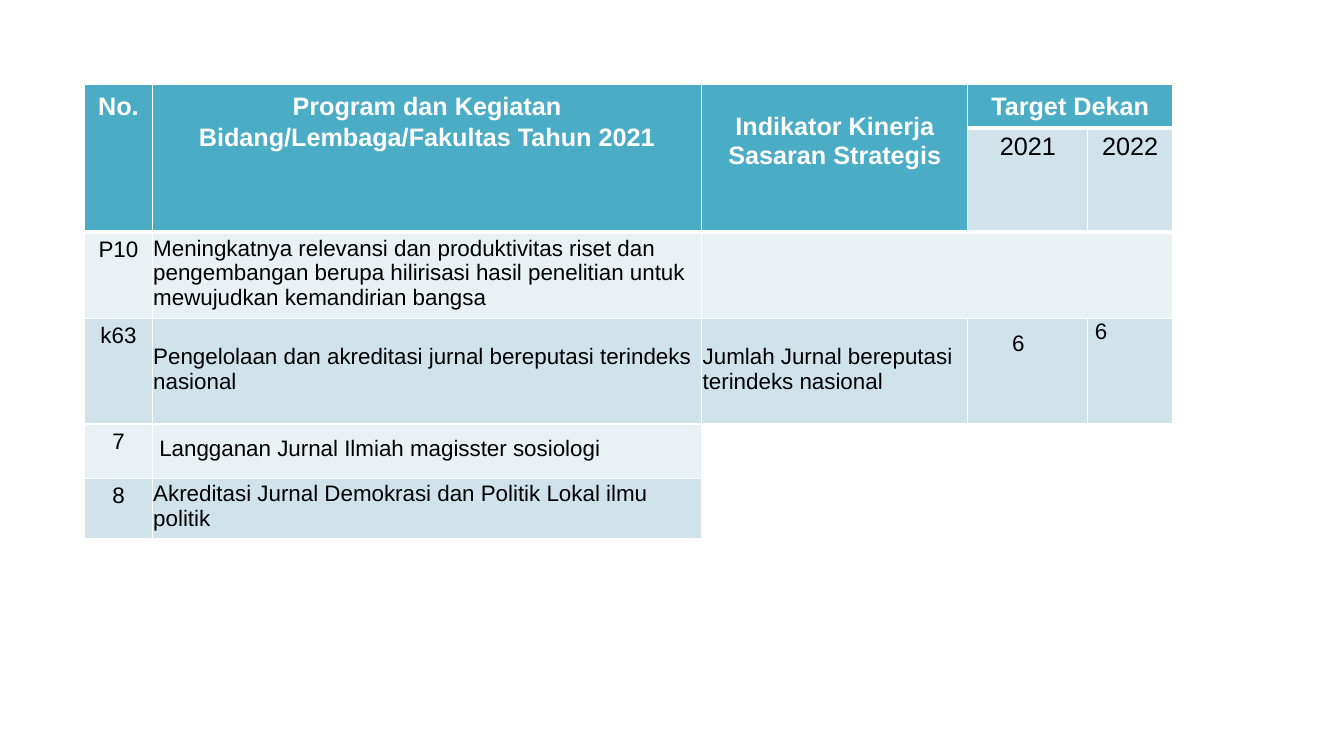
from pptx import Presentation
from pptx.dml.color import RGBColor
from pptx.enum.text import MSO_ANCHOR, PP_ALIGN
from pptx.oxml import parse_xml
from pptx.oxml.ns import nsdecls
from pptx.util import Inches, Pt

COLORS = {"header": "4BACC6", "dark": "D0E3EA", "light": "E9F1F5",
          "white": "FFFFFF", "text": "000000"}
COLUMN_WIDTHS = [0.67, 5.45, 2.64, 1.19, 0.84]
ROW_HEIGHTS = [0.43, 0.65, 0.86, 0.89, 0.54, 0.6, 0.43, 0.43, 0.53, 0.43]
ROW_FILLS = ["header", "dark", "light", "dark", "light", "dark"] + ["white"] * 4
MERGES = [((0, 0), (1, 0)), ((0, 1), (1, 1)), ((0, 2), (1, 2)),
          ((0, 3), (0, 4)), ((2, 2), (2, 4)), ((4, 2), (9, 4))]
WIDE = (0.1, 0.05, 0.1, 0.05)
TIGHT = (0.01, 0.01, 0.01, 0.05)
HEADER = {"size": 18, "bold": True, "color": "white", "center": True, "insets": WIDE}
YEAR = {"size": 18, "center": True, "insets": (0.1, 0.05, 0.1, 0.7)}
CODE = {"center": True, "insets": WIDE}
BODY = {"middle": True, "insets": TIGHT}
CONTENT = {
    (0, 0): ("No.", {**HEADER, "spacing": 1.1}),
    (0, 1): ("Program dan Kegiatan Bidang/Lembaga/Fakultas Tahun 2021",
             {**HEADER, "spacing": 1.1}),
    (0, 2): ("Indikator Kinerja Sasaran Strategis",
             {**HEADER, "middle": True, "insets": (0.1, 0.05, 0.1, 0.39)}),
    (0, 3): ("Target Dekan", {**HEADER, "middle": True}),
    (1, 3): ("2021", YEAR),
    (1, 4): ("2022", YEAR),
    (2, 0): ("P10", CODE),
    (2, 1): ("Meningkatnya relevansi dan produktivitas riset dan pengembangan "
             "berupa hilirisasi hasil penelitian untuk mewujudkan kemandirian bangsa", BODY),
    (3, 0): ("k63", CODE),
    (3, 1): ("Pengelolaan dan akreditasi jurnal bereputasi terindeks nasional", BODY),
    (3, 2): ("Jumlah Jurnal bereputasi terindeks nasional", BODY),
    (3, 3): ("6", {**BODY, "insets": (0.44, 0.01, 0.01, 0.55)}),
    (3, 4): ("6", {**BODY, "insets": (0.07, 0.01, 0.01, 0.79)}),
    (4, 0): ("7", CODE),
    (4, 1): ("Langganan Jurnal Ilmiah magisster sosiologi",
             {**BODY, "insets": (0.07, 0.01, 0.01, 0.05)}),
    (5, 0): ("8", CODE),
    (5, 1): ("Akreditasi Jurnal Demokrasi dan Politik Lokal ilmu politik", BODY),
}


class ProgramSlide:
    """Hold the font and current page, and draw the program table."""

    def __init__(self, page, font="Arial"):
        self.page = page
        self.font = font

    def add_table(self, left, top):
        table = self.page.shapes.add_table(
            len(ROW_HEIGHTS), len(COLUMN_WIDTHS), Inches(left), Inches(top),
            Inches(sum(COLUMN_WIDTHS)), Inches(sum(ROW_HEIGHTS))).table
        for column, width in zip(table.columns, COLUMN_WIDTHS):
            column.width = Inches(width)
        for row, height in zip(table.rows, ROW_HEIGHTS):
            row.height = Inches(height)
        for first, last in MERGES:
            table.cell(*first).merge(table.cell(*last))
        for row, shade in enumerate(ROW_FILLS):
            for column in range(len(COLUMN_WIDTHS)):
                cell = table.cell(row, column)
                self.add_borders(cell, row)
                merged_body = row >= 4 and column >= 2
                merged_header = row == 1 and column < 3
                self.fill_cell(
                    cell, "white" if merged_body else "header" if merged_header else shade)
        for place, (text, style) in CONTENT.items():
            self.set_text(table.cell(*place), text, **style)

    def add_borders(self, cell, row):
        weights = {"L": 1, "R": 1, "T": 3 if row in (1, 2) else 1, "B": 3 if row < 2 else 1}
        properties = cell._tc.get_or_add_tcPr()
        for side, weight in weights.items():
            properties.append(parse_xml(
                f'<a:ln{side} {nsdecls("a")} w="{Pt(weight)}"><a:solidFill>'
                f'<a:srgbClr val="{COLORS["white"]}"/></a:solidFill></a:ln{side}>'))

    def fill_cell(self, cell, color):
        cell.fill.solid()
        cell.fill.fore_color.rgb = RGBColor.from_string(COLORS[color])

    def set_text(self, cell, text, insets, size=16, bold=False, color="text",
                 center=False, middle=False, spacing=None):
        (cell.margin_left, cell.margin_top,
         cell.margin_right, cell.margin_bottom) = map(Inches, insets)
        cell.vertical_anchor = MSO_ANCHOR.MIDDLE if middle else MSO_ANCHOR.TOP
        cell.text_frame.text = text
        para = cell.text_frame.paragraphs[0]
        para.alignment = PP_ALIGN.CENTER if center else PP_ALIGN.LEFT
        if spacing:
            para.line_spacing = spacing
        for span in para.runs:
            span.font.name = self.font
            span.font.size = Pt(size)
            span.font.bold = bold
            span.font.color.rgb = RGBColor.from_string(COLORS[color])


def main():
    deck = Presentation()
    deck.slide_width = Inches(13.33)
    deck.slide_height = Inches(7.5)
    page = deck.slides.add_slide(deck.slide_layouts[6])
    ProgramSlide(page).add_table(0.84, 0.84)
    deck.save("out.pptx")


if __name__ == "__main__":
    main()
